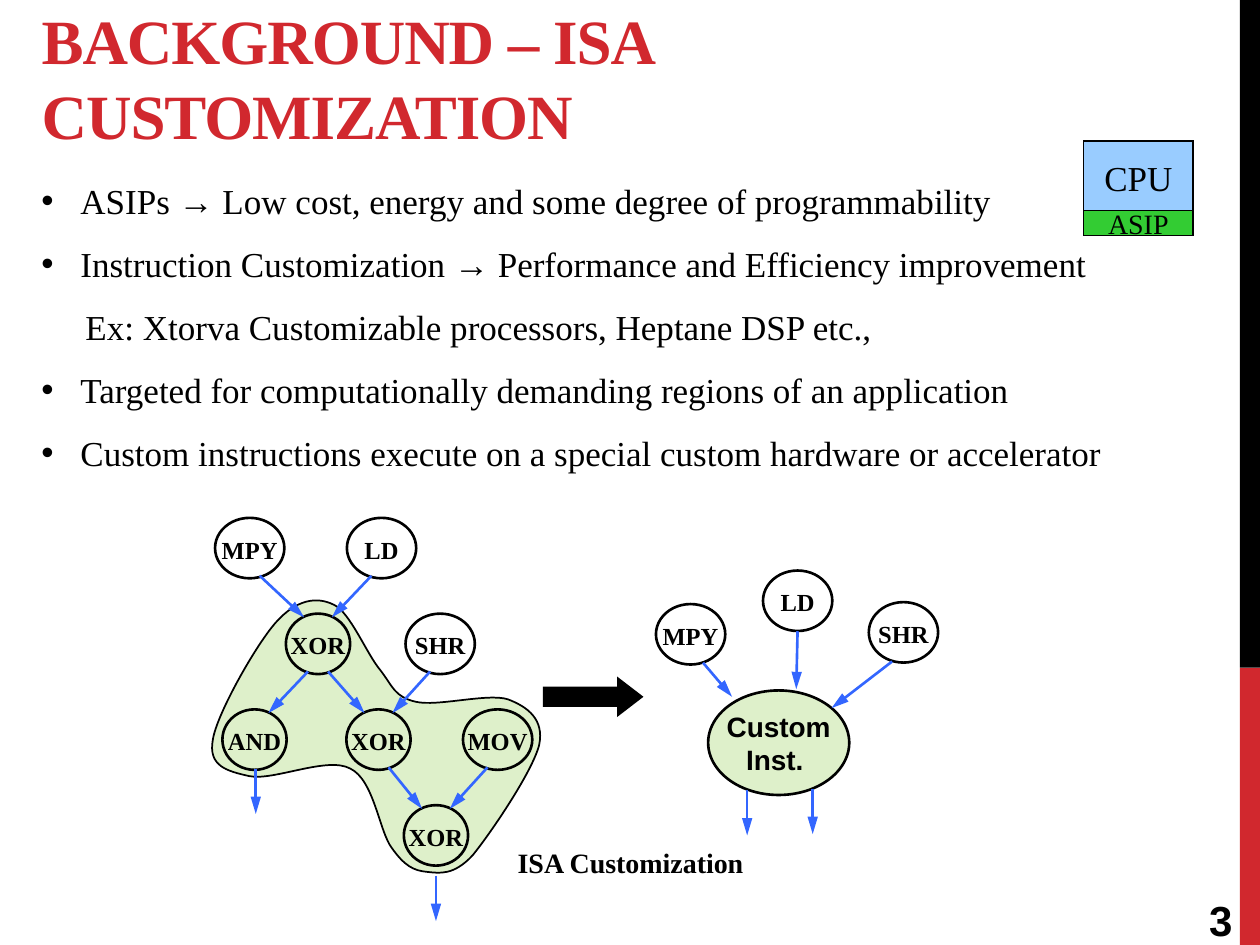
from dataclasses import dataclass
from lxml import etree
from pptx import Presentation, util as u
from pptx.dml.color import RGBColor
from pptx.enum import shapes, text
from pptx.oxml.ns import qn


@dataclass(frozen=True)
class Theme:
    serif: str = "Times New Roman"
    sans: str = "Arial"
    red: str = "D1282E"
    black: str = "000000"
    arrow: str = "3366FF"
    region: str = "92D050"
    cpu: str = "99CCFF"
    asip: str = "33CC33"
    title: int = 36
    number: int = 24
    body: int = 20
    label: int = 16
    node: int = 14


T = Theme()
W, H = 10, 7.5

# Content
TITLE = "BACKGROUND – ISA CUSTOMIZATION"
BULLETS = [  # text, has a bullet
    ("ASIPs → Low cost, energy and some degree of programmability", True),
    ("Instruction Customization → Performance and Efficiency improvement", True),
    ("Ex: Xtorva Customizable processors, Heptane DSP etc.,", False),
    ("Targeted for computationally demanding regions of an application", True),
    ("Custom instructions execute on a special custom hardware or accelerator", True),
]
NODES = {  # key: label, column, row
    "mpy": ("MPY", -0.08, 0), "ld": ("LD", 2.1, 0),
    "top": ("XOR", 1.05, 1), "shr": ("SHR", 3.07, 1),
    "and": ("AND", 0, 2), "mid": ("XOR", 2.05, 2), "mov": ("MOV", 4.02, 2),
    "low": ("XOR", 3, 3),
    "mpy2": ("MPY", 7.21, 0.9), "ld2": ("LD", 8.98, 0.55), "shr2": ("SHR", 10.73, 0.88),
}
EDGES = [("mpy", "top"), ("ld", "top"), ("top", "and"), ("top", "mid"),
         ("shr", "mid"), ("mid", "low"), ("mov", "low")]
CUSTOM_INPUTS = [((5.58, 5.26), (5.81, 5.53)), ((6.33, 5.01), (6.32, 5.47)),
                 ((7.08, 5.25), (6.6, 5.62))]
OUTPUTS = [(2.03, 6.1), (3.46, 6.95), (5.93, 6.27), (6.45, 6.26)]
REGION_START = (2.19, 4.94)
REGION = [  # Bezier control points and end of each curve
    ((2.03, 5.12), (1.72, 5.67), (1.69, 5.87)), ((1.65, 6.08), (1.8, 6.12), (1.98, 6.16)),
    ((2.17, 6.2), (2.6, 6), (2.78, 6.1)), ((2.97, 6.19), (3.01, 6.6), (3.11, 6.73)),
    ((3.21, 6.87), (3.28, 6.91), (3.39, 6.92)), ((3.49, 6.93), (3.6, 6.95), (3.75, 6.79)),
    ((3.89, 6.62), (4.23, 6.12), (4.28, 5.91)), ((4.32, 5.71), (4.19, 5.61), (4.03, 5.55)),
    ((3.87, 5.5), (3.47, 5.61), (3.3, 5.57)), ((3.13, 5.53), (3.12, 5.45), (3.02, 5.32)),
    ((2.91, 5.19), (2.78, 4.86), (2.65, 4.8)), ((2.51, 4.73), (2.35, 4.76), REGION_START),
]

# Graph grid
X0, Y0, COL, ROW = 2.02, 4.35, 0.48, 0.76
NODE_H, OUT_LEN = 0.48, 0.36

prs = Presentation()
prs.slide_width, prs.slide_height = u.Inches(W), u.Inches(H)
s = prs.slides.add_slide(prs.slide_layouts[5])


def inches(*values):
    return [u.Inches(v) for v in values]


def write(sp, lines, size, font=T.serif, color=T.black, bold=False,
          align=text.PP_ALIGN.LEFT, anchor=text.MSO_ANCHOR.TOP,
          margins=(0.1, 0.05, 0.1, 0.05), wrap=True, spacing=None):
    tf = sp.text_frame
    tf.text = "\n".join(lines)
    tf.word_wrap, tf.vertical_anchor = wrap, anchor
    tf.auto_size = text.MSO_AUTO_SIZE.NONE
    tf.margin_left, tf.margin_top, tf.margin_right, tf.margin_bottom = inches(*margins)
    for p in tf.paragraphs:
        p.alignment, p.line_spacing = align, spacing
        p.font.name, p.font.size, p.font.bold = font, u.Pt(size), bold
        p.font.color.rgb = RGBColor.from_string(color)
    return tf.paragraphs


def text_box(at, lines, size, **style):
    return write(s.shapes.add_textbox(*inches(*at)), lines, size, **style)


def paint(sp, fill=None, line=None, alpha=None):
    sp.shadow.inherit = False
    if fill:
        sp.fill.solid()
        sp.fill.fore_color.rgb = RGBColor.from_string(fill)
        if alpha:
            color = sp.fill._xPr.find(".//" + qn("a:srgbClr"))
            etree.SubElement(color, qn("a:alpha")).set("val", str(alpha * 1000))
    else:
        sp.fill.background()
    if line:
        sp.line.color.rgb = RGBColor.from_string(T.black)
        sp.line.width = u.Pt(line)
        etree.SubElement(sp.line._get_or_add_ln(), qn("a:miter")).set("lim", "800000")
    else:
        sp.line.fill.background()
    return sp


def shape(kind, at, **look):
    return paint(s.shapes.add_shape(kind, *inches(*at)), **look)


def center(sp, lines, size, top=0, **style):
    write(sp, lines, size, align=text.PP_ALIGN.CENTER, anchor=text.MSO_ANCHOR.MIDDLE,
          margins=(0, top, 0, 0), wrap=False, **style)


def arrow(start, end):
    c = s.shapes.add_connector(shapes.MSO_CONNECTOR.STRAIGHT, *inches(*start, *end))
    c.line.color.rgb = RGBColor.from_string(T.arrow)
    c.line.width = u.Pt(1.5)
    head = etree.SubElement(c.line._get_or_add_ln(), qn("a:tailEnd"))
    head.set("type", "triangle")
    head.set("len", "lg")
    etree.SubElement(c._element.spPr, qn("a:effectLst"))


def node_center(key):
    _, col, row = NODES[key]
    return X0 + col * COL, Y0 + row * ROW


def curved_shape(start, curves):
    """Outline all the points, then turn each three segments into one curve."""
    outline = s.shapes.build_freeform(*inches(*start), scale=1.0)
    outline.add_line_segments([inches(*pt) for curve in curves for pt in curve], close=True)
    sp = outline.convert_to_shape()
    segments = list(sp._element.iter(qn("a:lnTo")))
    for i in range(0, len(curves) * 3, 3):
        curve = etree.Element(qn("a:cubicBezTo"))
        segments[i].addprevious(curve)
        for segment in segments[i:i + 3]:
            curve.append(segment[0])
            segment.getparent().remove(segment)
    return sp


RECT, OVAL = shapes.MSO_SHAPE.RECTANGLE, shapes.MSO_SHAPE.OVAL

# Side bar
BAR, SPLIT = 0.16, 5.3
shape(RECT, (W - BAR, SPLIT, BAR, H - SPLIT), fill=T.red)
shape(RECT, (W - BAR, 0, BAR, SPLIT), fill=T.black)

# Title and slide number
title = s.shapes.title
title.left, title.top, title.width, title.height = inches(0.23, 0.21, 9.36, 0.8)
p, = write(title, [TITLE], T.title, color=T.red, bold=True,
           anchor=text.MSO_ANCHOR.MIDDLE, margins=(0.1, 0.05, 0.3, 0.05))
p._p.pPr.find(qn("a:defRPr")).set("spc", "-60")
text_box((8.44, 7.1, 1.44, 0.4), ["3"], T.number, font=T.sans, bold=True,
         align=text.PP_ALIGN.RIGHT, anchor=text.MSO_ANCHOR.MIDDLE)

# Bullets
paragraphs = text_box((0.23, 1.21, 9.41, 2.63), [line for line, _ in BULLETS], T.body,
                      align=text.PP_ALIGN.JUSTIFY, spacing=1.5)
for p, (_, bulleted) in zip(paragraphs, BULLETS):
    pPr = p._p.pPr
    pPr.set("marL", str(u.Inches(0.31 if bulleted else 0.35)))
    pPr.set("indent", str(u.Inches(-0.31 if bulleted else 0)))
    if bulleted:
        run_style = pPr.find(qn("a:defRPr"))
        run_style.addprevious(etree.Element(qn("a:buFont"), typeface=T.sans))
        run_style.addprevious(etree.Element(qn("a:buChar"), char="•"))

# Custom instruction and the region it replaces
center(shape(OVAL, (5.62, 5.48, 1.12, 0.83), fill=T.region, line=1.5, alpha=30),
       ["Custom", "Inst. "], T.label, font=T.sans, bold=True)
paint(curved_shape(REGION_START, REGION), fill=T.region, line=1, alpha=30)

# Operation nodes
for key, (label, _, _) in NODES.items():
    x, y = node_center(key)
    width = 0.51 if label in ("XOR", "AND") else 0.55
    oval = shape(OVAL, (x - width / 2, y - NODE_H / 2, width, NODE_H), line=1.5)
    center(oval, [label], T.node, top=0.02, bold=True)

# Data flow arrows
for source, target in EDGES:
    (x1, y1), (x2, y2) = node_center(source), node_center(target)
    side = 1 if x2 > x1 else -1
    arrow((x1 + side * 0.08, y1 + 0.22), (x2 - side * 0.11, y2 - 0.21))
for start, end in CUSTOM_INPUTS:
    arrow(start, end)
for x, y in OUTPUTS:
    arrow((x, y), (x, y + OUT_LEN))

# Transformation arrow and caption
block = shape(shapes.MSO_SHAPE.RIGHT_ARROW, (4.32, 5.39, 0.77, 0.28), fill=T.black, line=1.5)
block.adjustments[0], block.adjustments[1] = 0.5, 0.65
text_box((4.01, 6.66, 2.58, 0.37), ["ISA Customization"], T.label, bold=True)

# Processor block
center(shape(RECT, (8.6, 1.12, 0.87, 0.58), fill=T.cpu, line=1), ["CPU"], T.body)
center(shape(RECT, (8.6, 1.67, 0.87, 0.2), fill=T.asip, line=1), ["ASIP"], T.label)

prs.save("out.pptx")
